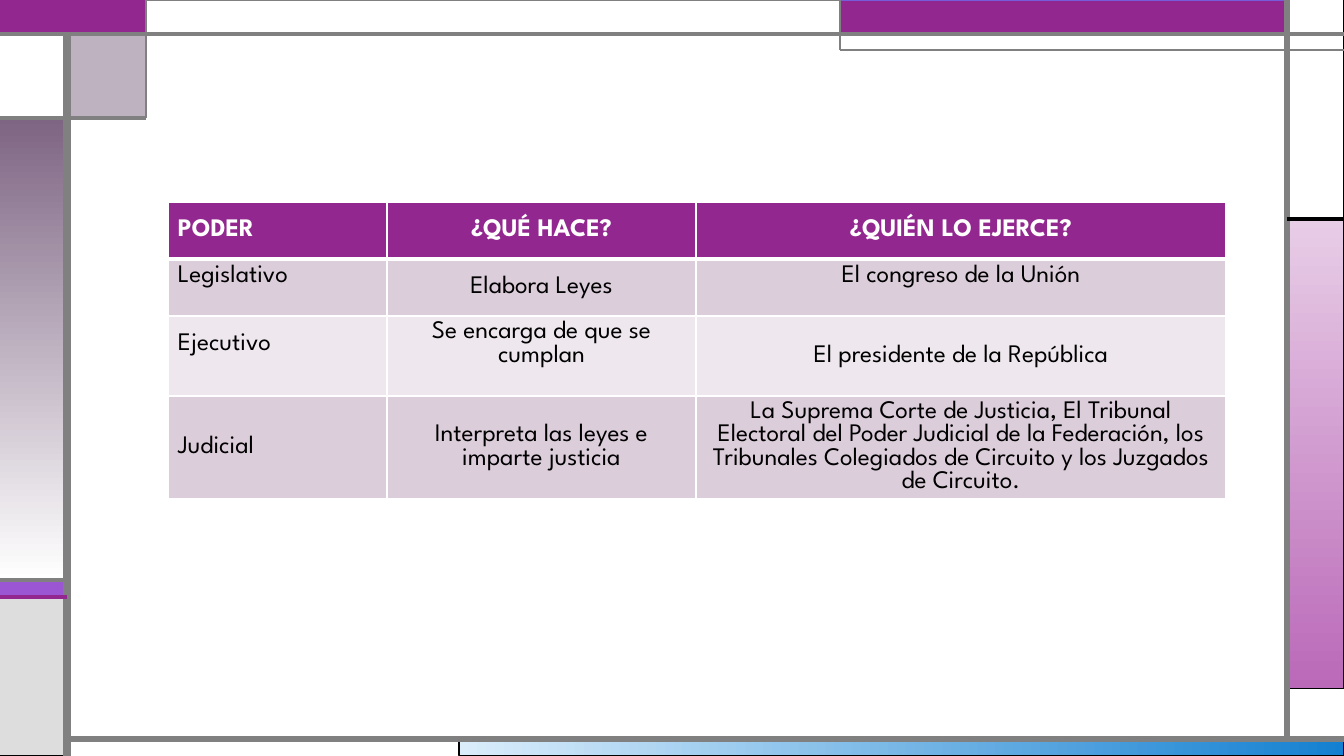
from lxml import etree
from pptx import Presentation
from pptx.dml.color import RGBColor
from pptx.enum.shapes import MSO_CONNECTOR as Connector, MSO_SHAPE as Shape
from pptx.enum.text import MSO_ANCHOR as Anchor, PP_ALIGN as Align
from pptx.oxml.ns import qn
from pptx.util import Pt

PX = 914400 / 100.8
FONT = "League Spartan"
WHITE = RGBColor(0xFF, 0xFF, 0xFF)
BLACK = RGBColor(0x00, 0x00, 0x00)
GRAY = RGBColor(0x80, 0x80, 0x80)
SILVER = RGBColor(0xDD, 0xDD, 0xDD)
PURPLE = RGBColor(0x92, 0x27, 0x8F)
VIOLET = RGBColor(0x9B, 0x57, 0xD3)
INDIGO = RGBColor(0x75, 0x5D, 0xD9)
MAUVE = RGBColor(0x7E, 0x65, 0x83)
PALE_PINK = RGBColor(0xE8, 0xCD, 0xE7)
PINK = RGBColor(0xBA, 0x69, 0xB8)
PALE_BLUE = RGBColor(0xDA, 0xED, 0xFB)
BLUE = RGBColor(0x14, 0x80, 0xD1)
BAND_DARK = RGBColor(0xDC, 0xCD, 0xDB)
BAND_LIGHT = RGBColor(0xEE, 0xE8, 0xEE)


def px(length):
    return round(length * PX)


def add_border(cell, side, position, width):
    """Draw one white cell border; position keeps the order the schema asks for."""
    border = etree.Element(qn(f"a:ln{side}"), w=str(Pt(width)))
    fill = etree.SubElement(border, qn("a:solidFill"))
    etree.SubElement(fill, qn("a:srgbClr"), val=str(WHITE))
    cell._tc.get_or_add_tcPr().insert(position, border)


deck = Presentation()
deck.slide_width, deck.slide_height = px(1344), px(756)
slide = deck.slides.add_slide(deck.slide_layouts[6])

# Frame panels: left, top, right, bottom, fill (two colours make a gradient), line, line width
LEFT, CORNER, BANNER, RIGHT, END = 67, 146, 840, 1287, 1344
TOP, STEP, LOW, STRIPE, FOOT, BOTTOM = 34, 118, 580, 597, 739, 756
SIDE_TOP = 219
panels = [
    (459, FOOT, END, BOTTOM, (PALE_BLUE, BLUE, 0), BLACK, 0.75),
    (RIGHT, SIDE_TOP, END, 689, (PALE_PINK, PINK, 270), BLACK, 0.75),
    (0, LOW, LEFT, STRIPE, VIOLET, BLACK, 0.75),
    (0, STRIPE, LEFT, BOTTOM, SILVER, BLACK, 0.75),
    (RIGHT, 0, END, SIDE_TOP, WHITE, BLACK, 0.75),
    (BANNER, 0, RIGHT, TOP, PURPLE, INDIGO, 0.75),
    (LEFT, TOP, CORNER, STEP, MAUVE, BLACK, 0.75),
    (0, STEP, LEFT, LOW, (MAUVE, WHITE, 270), BLACK, 0.75),
    (0, TOP, LEFT, STEP, WHITE, BLACK, 0.75),
    (0, 0, CORNER, TOP, PURPLE, PURPLE, 1.5),
    (CORNER, 0, BANNER, TOP, WHITE, GRAY, 0.75),
]
for left, top, right, bottom, paint, outline, width in panels:
    panel = slide.shapes.add_shape(
        Shape.RECTANGLE, px(left), px(top), px(right - left), px(bottom - top))
    panel.shadow.inherit = False
    if isinstance(paint, RGBColor):
        panel.fill.solid()
        panel.fill.fore_color.rgb = paint
    else:
        *stop_colors, angle = paint
        panel.fill.gradient()
        panel.fill.gradient_angle = angle
        for stop, color, place in zip(panel.fill.gradient_stops, stop_colors, (0, 1)):
            stop.color.rgb = color
            stop.position = place
    if paint == MAUVE:
        mauve = panel._element.spPr.find(qn("a:solidFill"))[0]
        etree.SubElement(mauve, qn("a:alpha"), val="50000")
    panel.line.color.rgb = outline
    panel.line.width = Pt(width)

# Frame rules: start x, start y, end x, end y, colour, width
rules = [
    (LEFT, BOTTOM, LEFT, TOP, GRAY, 6),
    (LEFT, FOOT, END, FOOT, GRAY, 4.5),
    (RIGHT, FOOT, RIGHT, 0, GRAY, 4.5),
    (0, TOP, END, TOP, GRAY, 3),
    (END, 50, BANNER, 50, GRAY, 1.5),
    (BANNER, 50, BANNER, 0, GRAY, 1.5),
    (RIGHT, SIDE_TOP, END, SIDE_TOP, BLACK, 2.25),
    (CORNER, 0, CORNER, STEP, GRAY, 1.5),
    (CORNER, STEP, 0, STEP, GRAY, 2.25),
    (LEFT, LOW, 0, LOW, GRAY, 2.25),
    (LEFT, STRIPE, 0, STRIPE, PURPLE, 2.25),
]
for *ends, color, width in rules:
    rule = slide.shapes.add_connector(Connector.STRAIGHT, *map(px, ends))
    rule.line.color.rgb = color
    rule.line.width = Pt(width)
    etree.SubElement(rule._element.spPr, qn("a:effectLst"))

# Table of the three powers
powers = [
    ("PODER", "¿QUÉ HACE?", "¿QUIÉN LO EJERCE?"),
    ("Legislativo", "Elabora Leyes", "El congreso de la Unión"),
    ("Ejecutivo", "Se encarga de que se cumplan", "El presidente de la República"),
    ("Judicial", "Interpreta las leyes e imparte justicia",
     "La Suprema Corte de Justicia, El Tribunal Electoral del Poder Judicial de la "
     "Federación, los Tribunales Colegiados de Circuito y los Juzgados de Circuito."),
]
column_widths = (219, 309, 530)
row_heights = (57, 57, 80, 103)
row_fills = (PURPLE, BAND_DARK, BAND_LIGHT, BAND_DARK)
raised = {(1, 0), (1, 2), (2, 0), (2, 1)}  # cells whose text sits above the middle

table = slide.shapes.add_table(
    4, 3, px(168), px(202), px(sum(column_widths)), px(sum(row_heights))).table
for column, width in zip(table.columns, column_widths):
    column.width = px(width)
for r, (texts, height, row_fill) in enumerate(zip(powers, row_heights, row_fills)):
    table.rows[r].height = px(height)
    for c, text in enumerate(texts):
        cell = table.cell(r, c)
        cell.vertical_anchor = Anchor.MIDDLE
        cell.margin_left = cell.margin_right = px(10)
        cell.margin_top = px(5)
        cell.margin_bottom = px(28 if (r, c) in raised else 5)
        cell.fill.solid()
        cell.fill.fore_color.rgb = row_fill
        widths = {"L": 1, "R": 1, "T": 3 if r == 1 else 1, "B": 3 if r == 0 else 1}
        for position, (side, width) in enumerate(widths.items()):
            add_border(cell, side, position, width)
        paragraph = cell.text_frame.paragraphs[0]
        paragraph.alignment = Align.CENTER if c else Align.LEFT
        run = paragraph.add_run()
        run.text = text
        for key, value in {"name": FONT, "size": Pt(18), "bold": r == 0}.items():
            setattr(run.font, key, value)
        run.font.color.rgb = BLACK if r else WHITE

deck.save("out.pptx")
